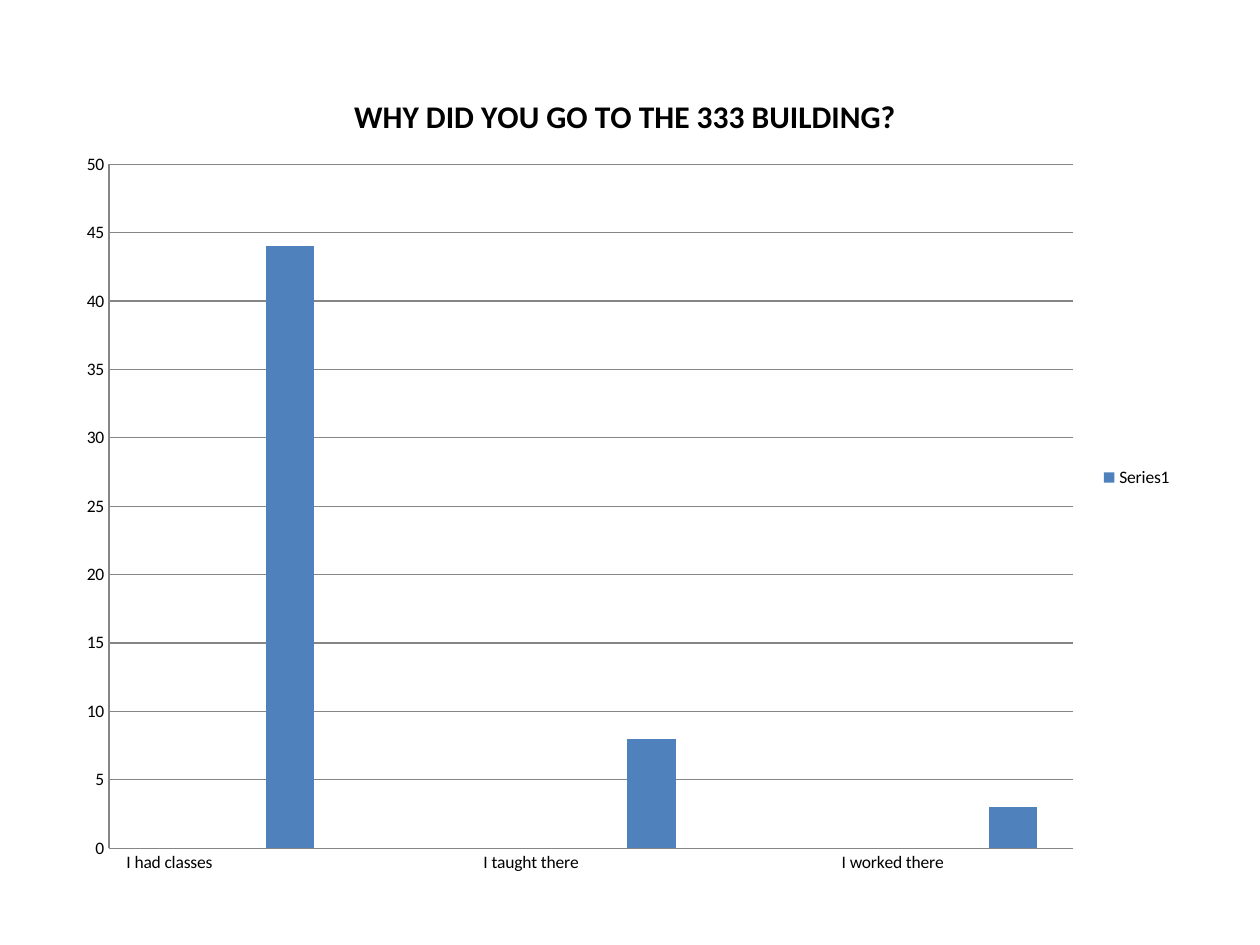
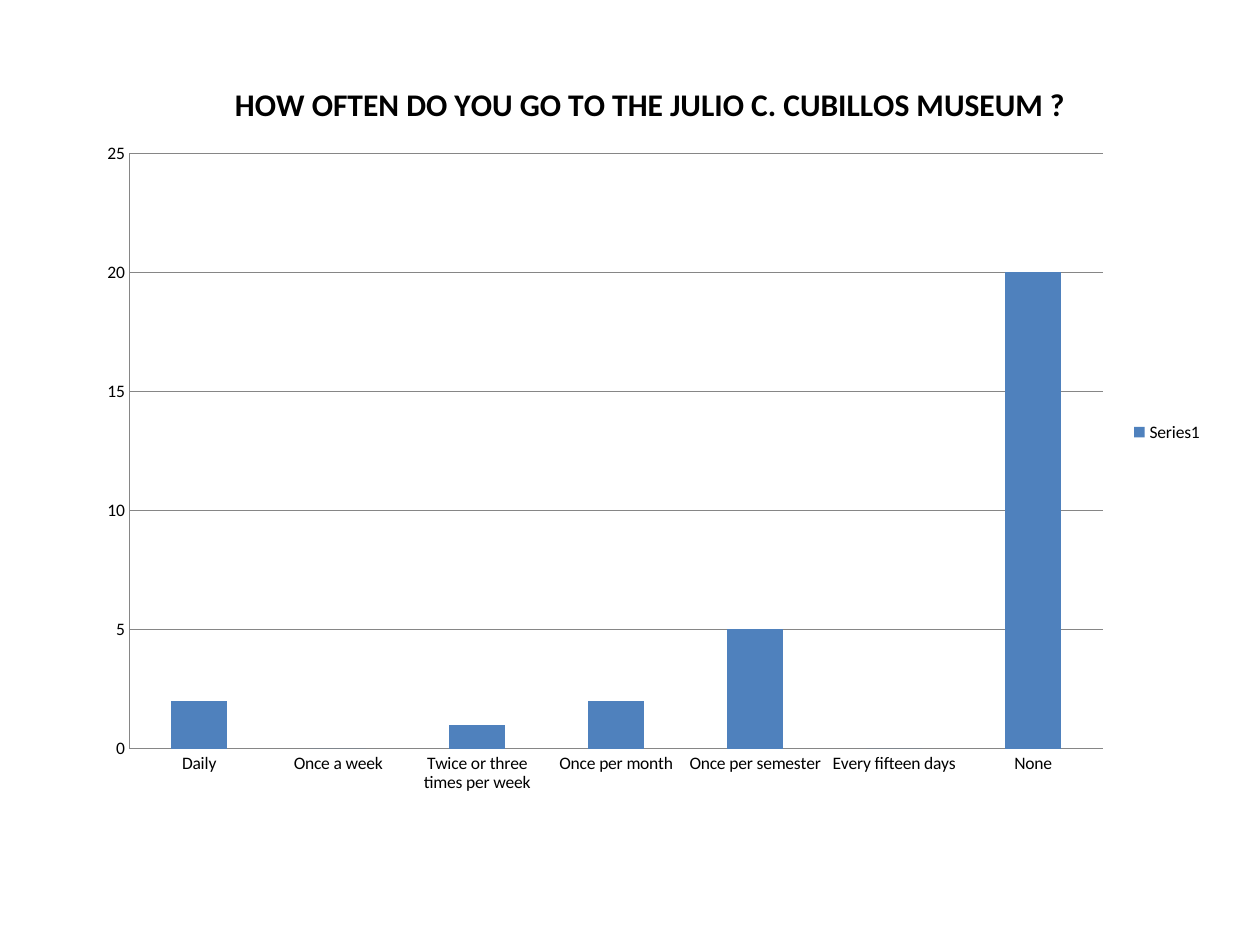
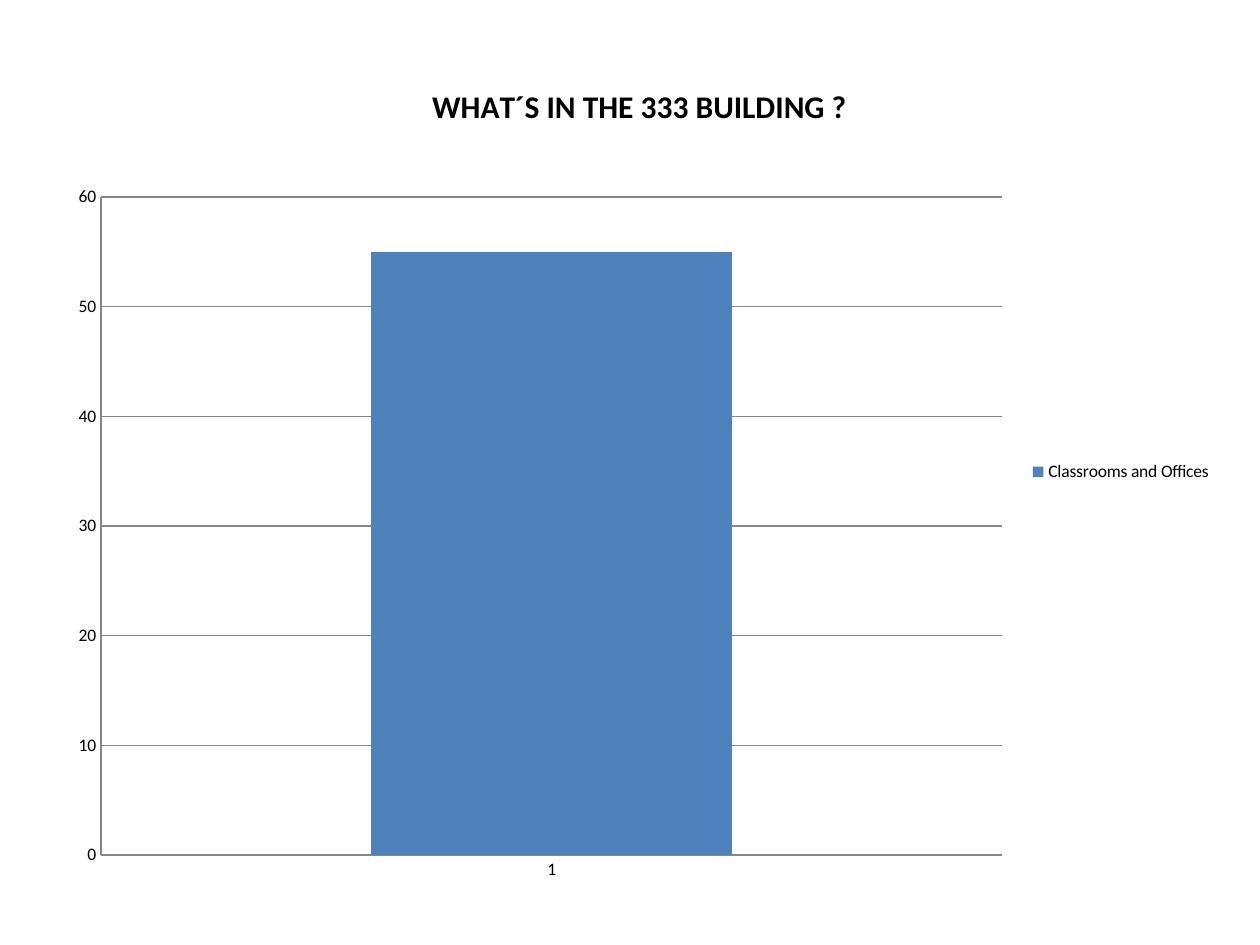
from pptx import Presentation
from pptx import util as u
from pptx.chart.data import CategoryChartData
from pptx.dml.color import RGBColor
from pptx.enum import chart as ch
from pptx.oxml import parse_xml
from pptx.oxml.ns import nsdecls

HUES = {"bar": "4F81BD", "text": "000000", "line": "868686", "back": "FFFFFF"}
FONT = "Calibri"
WIDE, HIGH = u.Inches(10), u.Inches(7.5)
COL, ROW = WIDE / 100, HIGH / 100

POLLS = [
    {
        "title": "WHY DID YOU GO TO THE 333 BUILDING?",
        "box": (5.1, 6.93, 89, 87.2),
        "plot": (0.04, 0.12, 0.86, 0.83),
        "top": (50, 5),
        "name": "Series1",
        "cats": ["I had classes", "", "", "I taught there", "", "", "I worked there", ""],
        "vals": [None, 44, None, None, 8, None, None, 3],
    },
    {
        "title": "HOW OFTEN DO YOU GO TO THE JULIO C. CUBILLOS MUSEUM ?",
        "box": (6.7, 5.87, 89.8, 79.73),
        "plot": (0.04, 0.13, 0.86, 0.79),
        "top": (25, 5),
        "name": "Series1",
        "cats": ["Daily", "Once a week", "Twice or three times per week", "Once per month",
                 "Once per semester", "Every fifteen days", "None"],
        "vals": [2, 0, 1, 2, 5, 0, 20],
    },
    {
        "title": "WHAT´S IN THE 333 BUILDING ?",
        "box": (4.3, 5.87, 92.9, 88.13),
        "plot": (0.04, 0.17, 0.77, 0.79),
        "top": (60, 10),
        "name": "Classrooms and Offices",
        "cats": ["1"],
        "vals": [55],
    },
]


def hue(key):
    return RGBColor.from_string(HUES[key])


def style(font, size, bold=False):
    font.name, font.size, font.bold = FONT, u.Pt(size), bold
    font.color.rgb = hue("text")


def rule(line):
    line.color.rgb = hue("line")
    line.width = u.Pt(0.75)


def place(chart, plot):
    area = chart.element.chart.plotArea
    for old in area.findall("{*}layout"):
        area.remove(old)
    sizes = "".join(f'<c:{tag} val="{val}"/>' for tag, val in zip("xywh", plot))
    area.insert(0, parse_xml(
        f'<c:layout {nsdecls("c")}><c:manualLayout><c:layoutTarget val="inner"/>'
        f'<c:xMode val="edge"/><c:yMode val="edge"/>{sizes}</c:manualLayout></c:layout>'))


def head(chart, title):
    chart.has_title = True
    frame = chart.chart_title.text_frame
    frame.text = title
    style(frame.paragraphs[0].runs[0].font, 18, True)
    chart.chart_title.include_in_layout = False


def axes(chart, top, step):
    for axis in (chart.category_axis, chart.value_axis):
        axis.major_tick_mark = axis.minor_tick_mark = ch.XL_TICK_MARK.NONE
        rule(axis.format.line)
        style(axis.tick_labels.font, 10)
    scale = chart.value_axis
    scale.minimum_scale, scale.maximum_scale, scale.major_unit = 0, top, step
    scale.has_major_gridlines = True
    rule(scale.major_gridlines.format.line)


def graph(slide, box, poll):
    data = CategoryChartData()
    data.categories = poll["cats"]
    data.add_series(poll["name"], poll["vals"])
    chart = slide.shapes.add_chart(ch.XL_CHART_TYPE.COLUMN_CLUSTERED, *box, data).chart
    style(chart.font, 10)
    head(chart, poll["title"])
    axes(chart, *poll["top"])
    bars = chart.plots[0]
    bars.gap_width, bars.vary_by_categories = 150, False
    fill = bars.series[0].format.fill
    fill.solid()
    fill.fore_color.rgb = hue("bar")
    chart.has_legend = True
    chart.legend.position = ch.XL_LEGEND_POSITION.RIGHT
    chart.legend.include_in_layout = False
    style(chart.legend.font, 10)
    place(chart, poll["plot"])


def page(deck, poll):
    slide = deck.slides.add_slide(deck.slide_layouts[6])
    back = slide.background.fill
    back.solid()
    back.fore_color.rgb = hue("back")
    left, top, wide, high = poll["box"]
    box = [round(n) for n in (left * COL, top * ROW, wide * COL, high * ROW)]
    graph(slide, box, poll)


def main():
    deck = Presentation()
    deck.slide_width, deck.slide_height = WIDE, HIGH
    for poll in POLLS:
        page(deck, poll)
    deck.save("out.pptx")


if __name__ == "__main__":
    main()
